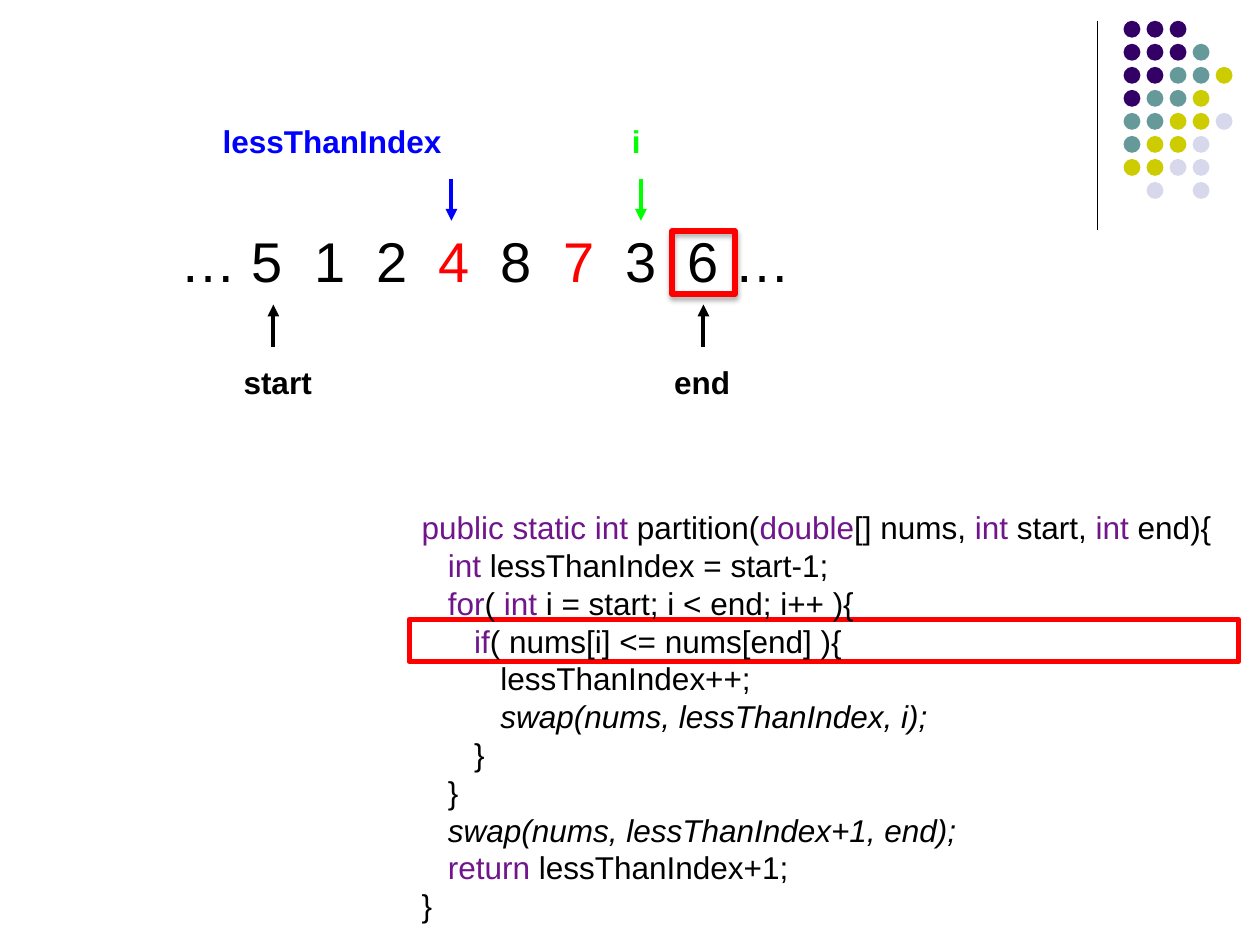
import pptx
import pptx.dml.color
import pptx.enum.shapes
import pptx.enum.text
import pptx.oxml
import pptx.oxml.ns
import pptx.util
from lxml import etree
from pptx.dml.color import RGBColor
from pptx.util import Cm

BLACK = RGBColor(0x00, 0x00, 0x00)
RED = RGBColor(0xFF, 0x00, 0x00)
BLUE = RGBColor(0x00, 0x00, 0xFF)
GREEN = RGBColor(0x00, 0xFF, 0x00)
KEYWORD = RGBColor(0x70, 0x15, 0x8B)
DOT_COLORS = {
    "P": RGBColor(0x33, 0x00, 0x66),
    "T": RGBColor(0x66, 0x99, 0x99),
    "Y": RGBColor(0xCC, 0xCC, 0x00),
    "L": RGBColor(0xD8, 0xD8, 0xEC),
}
DOT_ROWS = ["PPP", "PPPT", "PPTTY", "PTTY", "TTYYL", "TYYL", "YYLL", " L L"]

FONT = "Arial"
LINE_HEIGHT = 1.2
INDENT = 0.53

# Label, colour, label left, label width, arrow x, whether above the numbers
POINTERS = [
    ("lessThanIndex", BLUE, 0.85, 5.08, 5.71, True),
    ("i", GREEN, 9.1, 1.06, 9.53, True),
    ("start", BLACK, 1.27, 3.39, 2.12, False),
    ("end", BLACK, 9.95, 1.9, 10.79, False),
]
NUMBERS = [("…", BLACK), ("5", BLACK), ("1", BLACK), ("2", BLACK), ("4", RED),
           ("8", BLACK), ("7", RED), ("3", BLACK), ("6 …", BLACK)]

# Indent level, text in which "|" switches between keyword and plain, italic
CODE = [
    (0, "public static int |partition(|double|[] nums, |int| start, |int| end){", False),
    (1, "int |lessThanIndex = start-1;", False),
    (1, "for|( |int |i = start; i < end; i++ ){", False),
    (2, "if|( nums[i] <= nums[end] ){", False),
    (3, "|lessThanIndex++;", False),
    (3, "|swap(nums, lessThanIndex, i);", True),
    (2, "|}", False),
    (1, "|}", False),
    (1, "|swap(nums, lessThanIndex+1, end);", True),
    (1, "return| lessThanIndex+1;", False),
    (0, "|}", False),
]


def add_xml(parent, tag, **attributes):
    return etree.SubElement(parent, pptx.oxml.ns.qn(tag), attributes)


def add_line(slide, start, end, color, width):
    line = slide.shapes.add_connector(
        pptx.enum.shapes.MSO_CONNECTOR.STRAIGHT,
        *[Cm(value) for value in (*start, *end)])
    line.line.color.rgb = color
    line.line.width = pptx.util.Pt(width)
    add_xml(line._element.spPr, "a:effectLst")
    return line


def add_arrow(slide, start, end, color):
    arrow = add_line(slide, start, end, color, 2.25)
    add_xml(arrow.line._get_or_add_ln(), "a:tailEnd", type="triangle")


def add_frame(slide, left, top, width, height):
    frame = slide.shapes.add_shape(
        pptx.enum.shapes.MSO_SHAPE.RECTANGLE,
        Cm(left), Cm(top), Cm(width), Cm(height))
    frame.shadow.inherit = False
    frame.fill.background()
    frame.line.color.rgb = RED
    frame.line.width = pptx.util.Pt(3)
    return frame


def add_drop_shadow(shape):
    effects = shape._element.spPr.find(pptx.oxml.ns.qn("a:effectLst"))
    shadow = add_xml(effects, "a:outerShdw", blurRad=str(pptx.util.Pt(3.1)),
                     dist=str(pptx.util.Pt(1.8)), dir="5400000", rotWithShape="0")
    color = add_xml(shadow, "a:srgbClr", val=str(BLACK))
    add_xml(color, "a:alpha", val="35000")


def add_text_frame(slide, left, top, width, height):
    box = slide.shapes.add_textbox(Cm(left), Cm(top), Cm(width), Cm(height))
    box.text_frame.word_wrap = True
    box.text_frame.auto_size = pptx.enum.text.MSO_AUTO_SIZE.SHAPE_TO_FIT_TEXT
    return box.text_frame


def fill_paragraph(paragraph, pieces, size, bold=False, italic=False):
    """Write (text, colour) pieces as runs of one paragraph."""
    paragraph.line_spacing = pptx.util.Pt(size * LINE_HEIGHT)
    for text, color in pieces:
        run = paragraph.add_run()
        run.text = text
        run.font.name = FONT
        run.font.size = pptx.util.Pt(size)
        run.font.bold = bold
        run.font.italic = italic
        run.font.color.rgb = color


def add_dot_ornament(slide, left, top, height):
    add_line(slide, (left, top), (left, top + 4.22), BLACK, 0.75)
    diameter = 0.34
    pitch = (height - diameter) / (len(DOT_ROWS) - 1)
    for row, colors in enumerate(DOT_ROWS):
        for column, key in enumerate(colors):
            if key == " ":
                continue
            dot = slide.shapes.add_shape(
                pptx.enum.shapes.MSO_SHAPE.OVAL,
                Cm(left + 0.53 + column * pitch), Cm(top + row * pitch),
                Cm(diameter), Cm(diameter))
            dot.shadow.inherit = False
            dot.fill.solid()
            dot.fill.fore_color.rgb = DOT_COLORS[key]
            dot.line.fill.background()


def add_numbers(slide, left, top, width, height):
    """Write the numbers at evenly spaced tab stops."""
    paragraph = add_text_frame(slide, left, top, width, height).paragraphs[0]
    pieces = [(text if index == 0 else "\t" + text, color)
              for index, (text, color) in enumerate(NUMBERS)]
    fill_paragraph(paragraph, pieces, 32)
    tabs = add_xml(paragraph._p.get_or_add_pPr(), "a:tabLst")
    for index in range(len(NUMBERS) - 1):
        add_xml(tabs, "a:tab", pos=str(Cm(1.44 + index * 1.255)), algn="l")


def add_array_diagram(slide, left, top, width):
    add_numbers(slide, left, top + 2.12, width, 1.61)
    for label, color, label_left, label_width, arrow_x, above in POINTERS:
        label_top, tail, head = (0, 1.27, 2.12) if above else (4.87, 4.66, 3.81)
        add_arrow(slide, (left + arrow_x, top + tail),
                  (left + arrow_x, top + head), color)
        frame = add_text_frame(slide, left + label_left, top + label_top,
                               label_width, 1.02)
        fill_paragraph(frame.paragraphs[0], [(label, color)], 18, bold=True)
    add_drop_shadow(add_frame(slide, left + 10.16, top + 2.33, 1.27, 1.27))


def add_code_listing(slide, left, top, width, height):
    add_frame(slide, left, top + 2.37, width - 0.21, 0.85)
    frame = add_text_frame(slide, left, top, width, height)
    for index, (level, code, italic) in enumerate(CODE):
        paragraph = frame.add_paragraph() if index else frame.paragraphs[0]
        pieces = [(text, BLACK if position % 2 else KEYWORD)
                  for position, text in enumerate(code.split("|")) if text]
        fill_paragraph(paragraph, pieces, 18, italic=italic)
        paragraph._p.get_or_add_pPr().set("marL", str(Cm(level * INDENT)))


def main():
    presentation = pptx.Presentation()
    presentation.slide_width = Cm(25.4)
    presentation.slide_height = Cm(19.05)
    slide = presentation.slides.add_slide(presentation.slide_layouts[6])
    add_dot_ornament(slide, 22.12, 0.42, 3.59)
    add_array_diagram(slide, 3.39, 2.33, 13.12)
    add_code_listing(slide, 8.25, 10.12, 16.93, 8.72)
    presentation.save("out.pptx")


if __name__ == "__main__":
    main()
